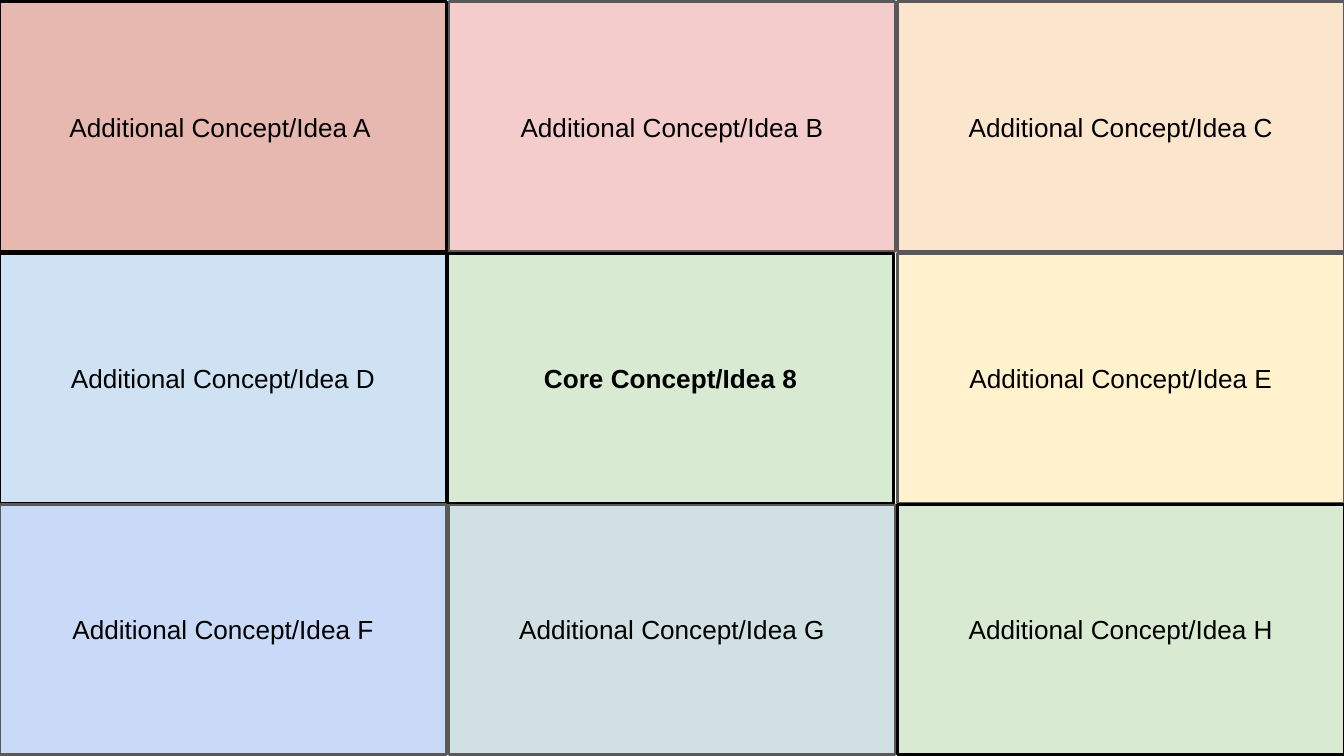
from pptx import Presentation
from pptx.dml.color import RGBColor
from pptx.enum.shapes import MSO_SHAPE
from pptx.enum.text import MSO_ANCHOR, PP_ALIGN
from pptx.util import Inches, Pt

BLACK = RGBColor(0x00, 0x00, 0x00)
GRAY = RGBColor(0x59, 0x59, 0x59)
CLAY = RGBColor(0xE6, 0xB8, 0xAF)
ROSE = RGBColor(0xF4, 0xCC, 0xCC)
PEACH = RGBColor(0xFC, 0xE5, 0xCD)
SKY = RGBColor(0xCF, 0xE2, 0xF3)
CREAM = RGBColor(0xFF, 0xF2, 0xCC)
BLUE = RGBColor(0xC9, 0xDA, 0xF8)
TEAL = RGBColor(0xD0, 0xE0, 0xE3)
GREEN = RGBColor(0xD9, 0xEA, 0xD3)

WIDE = Inches(10)
HIGH = WIDE * 9 // 16

IDEA = "Additional Concept/Idea "
# column, row, ending of the label, fill, border
IDEAS = [
    (0, 0, "A ", CLAY, BLACK),
    (1, 0, "B", ROSE, GRAY),
    (2, 0, "C", PEACH, GRAY),
    (0, 1, "D", SKY, BLACK),
    (2, 1, "E", CREAM, GRAY),
    (0, 2, "F", BLUE, GRAY),
    (1, 2, "G", TEAL, GRAY),
    (2, 2, "H", GREEN, BLACK),
]


def apply(target, style):
    for name, value in style.items():
        setattr(target, name, value)


class Board:
    """Holds the style, the grid and the current slide."""

    font = {"name": "Arial", "size": Pt(14)}
    frame = {"word_wrap": True, "vertical_anchor": MSO_ANCHOR.MIDDLE}
    frame.update({f"margin_{side}": Inches(0.1)
                  for side in ("left", "top", "right", "bottom")})
    width, height = Inches(3.32), Inches(1.86)
    step_x, step_y = Inches(3.34), Inches(1.87)
    top = Pt(1)

    def __init__(self, deck):
        self.slide = deck.slides.add_slide(deck.slide_layouts[6])

    def cell(self, col, row, text, fill, border, bold=False):
        box = self.slide.shapes.add_shape(
            MSO_SHAPE.RECTANGLE,
            col * self.step_x, self.top + row * self.step_y,
            self.width, self.height)
        box.shadow.inherit = False
        box.fill.solid()
        box.fill.fore_color.rgb = fill
        box.line.color.rgb = border
        box.line.width = Pt(1.5)
        apply(box.text_frame, self.frame)
        para = box.text_frame.paragraphs[0]
        para.alignment = PP_ALIGN.CENTER
        run = para.add_run()
        run.text = text
        apply(run.font, {**self.font, "bold": bold})
        run.font.color.rgb = BLACK
        return box


def main():
    deck = Presentation()
    apply(deck, {"slide_width": WIDE, "slide_height": HIGH})
    board = Board(deck)
    for col, row, end, fill, border in IDEAS:
        board.cell(col, row, IDEA + end, fill, border)
    # The core cell comes last so that its border lies on top.
    core = board.cell(1, 1, "Core Concept/Idea 8", GREEN, BLACK, bold=True)
    core.left = Inches(3.33)
    deck.save("out.pptx")


if __name__ == "__main__":
    main()
